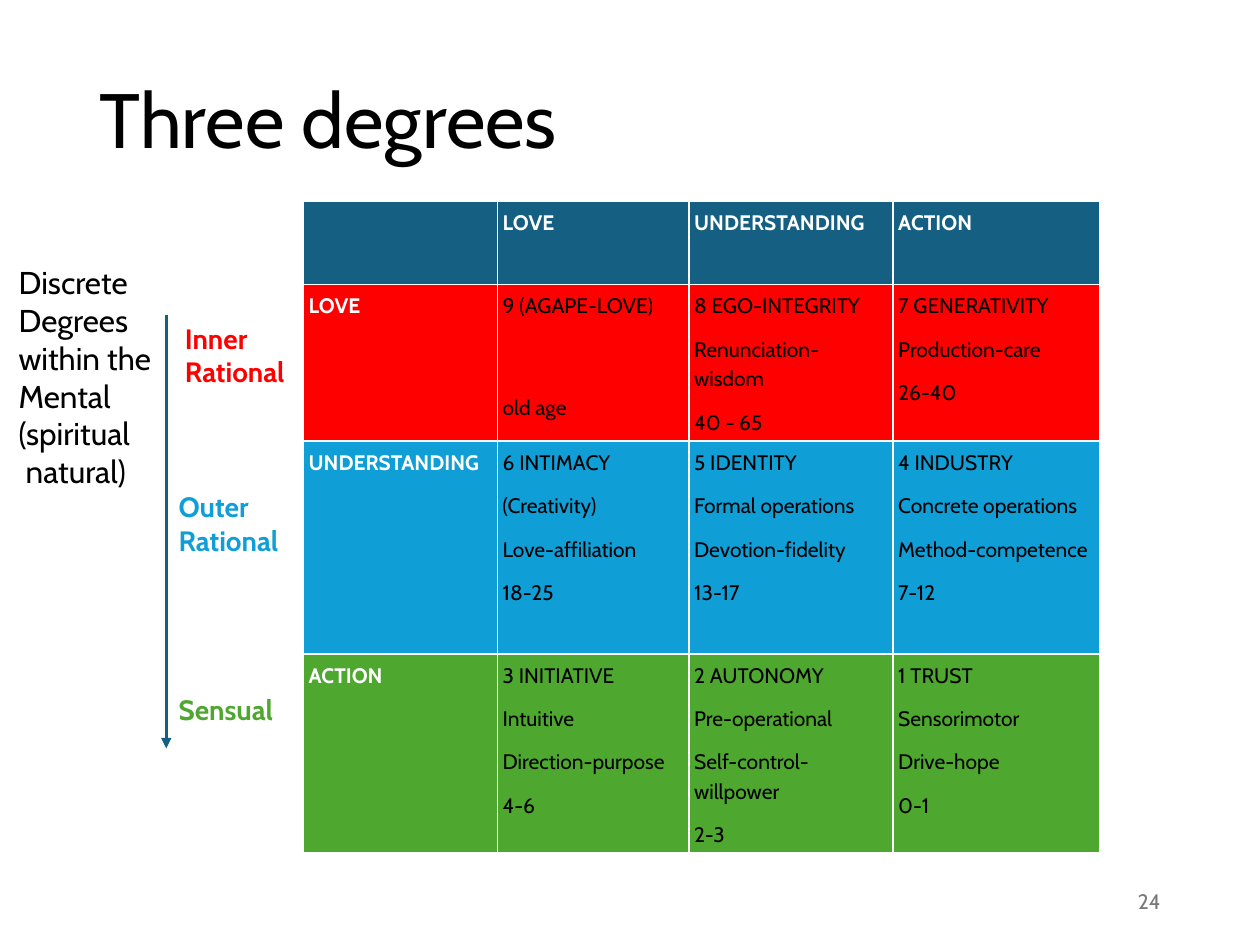
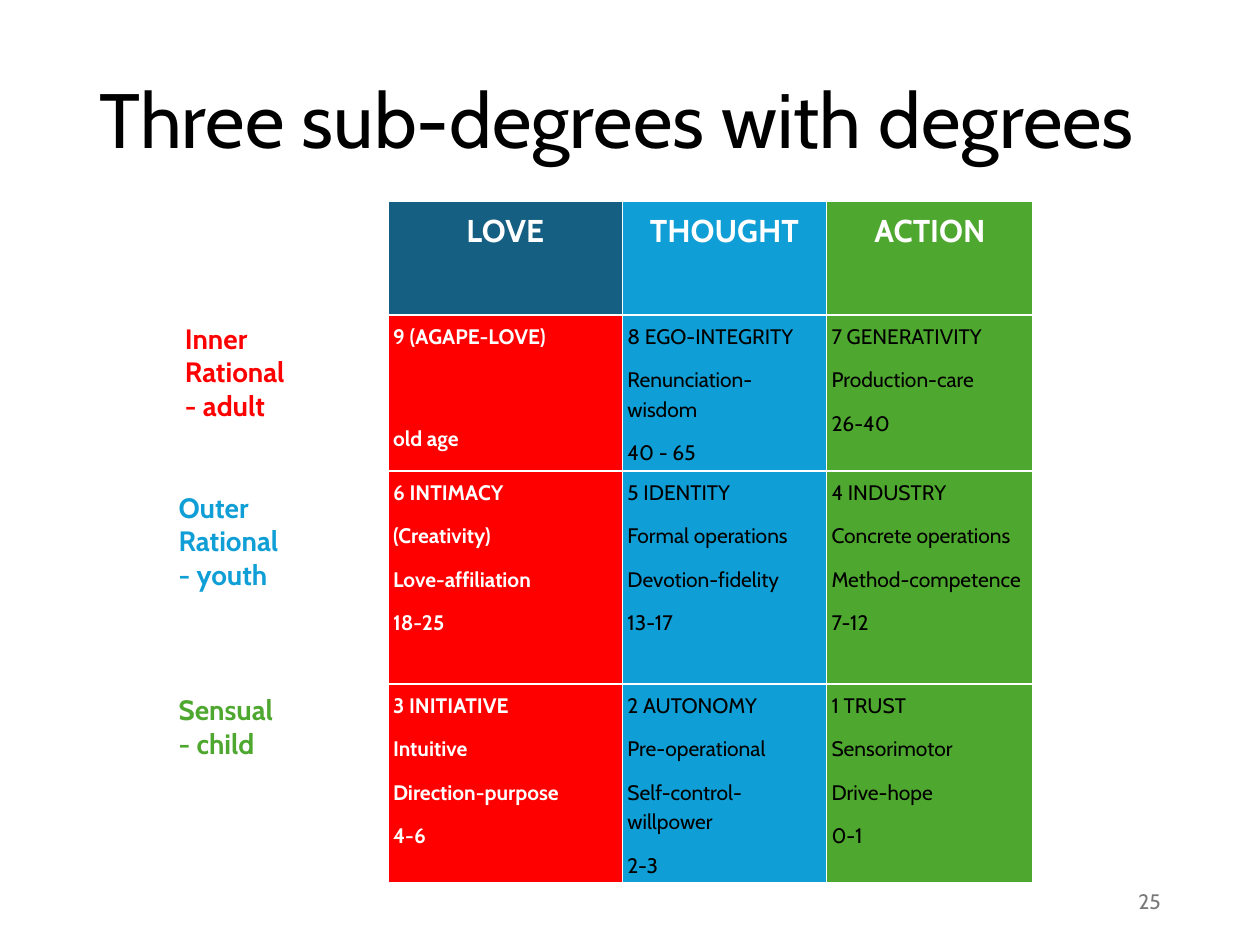
"""Builds two slides that lay out nine stages of life in grids of degrees."""
import pptx
import pptx.util
import pptx.dml.color
import pptx.enum.text
import pptx.enum.shapes
import lxml.etree

Inches = pptx.util.Inches
Pt = pptx.util.Pt
RGBColor = pptx.dml.color.RGBColor
Align = pptx.enum.text.PP_ALIGN
Anchor = pptx.enum.text.MSO_ANCHOR
Fit = pptx.enum.text.MSO_AUTO_SIZE

FONT = "Cabin"
BLACK = RGBColor(0x00, 0x00, 0x00)
WHITE = RGBColor(0xFF, 0xFF, 0xFF)
GREY = RGBColor(0x79, 0x79, 0x79)
NAVY = RGBColor(0x15, 0x60, 0x82)
RED = RGBColor(0xFF, 0x00, 0x00)
BLUE = RGBColor(0x0F, 0x9E, 0xD5)
GREEN = RGBColor(0x4E, 0xA7, 0x2E)
HUES = [RED, BLUE, GREEN]

STAGES = [
    [["9 (AGAPE-LOVE)", "old age"],
     ["8 EGO-INTEGRITY", "Renunciation-wisdom", "40 - 65"],
     ["7 GENERATIVITY", "Production-care", "26-40"]],
    [["6 INTIMACY", "(Creativity)", "Love-affiliation", "18-25"],
     ["5 IDENTITY", "Formal operations", "Devotion-fidelity", "13-17"],
     ["4 INDUSTRY", "Concrete operations", "Method-competence", "7-12"]],
    [["3 INITIATIVE", "Intuitive", "Direction-purpose", "4-6"],
     ["2 AUTONOMY", "Pre-operational", "Self-control-willpower", "2-3"],
     ["1 TRUST", "Sensorimotor", "Drive-hope", "0-1"]],
]
LEVELS = ["LOVE", "UNDERSTANDING", "ACTION"]
DEGREES = [["Inner", "Rational"], ["Outer", "Rational"], ["Sensual"]]
AGES = ["- adult", "- youth", "- child"]
SCOPE = ["Discrete\vDegrees", "within the", "Mental", "(spiritual\v natural)"]

GRID_TOP = 1.6
ROW_HIGH = [1.24, 1.69, 1.58]
LABEL_AT = [(1.37, 2.5, 1.06), (1.32, 3.84, 1.06), (1.32, 5.45, 1.03)]
LABEL_LINE = 0.27
LABEL_PAD = 0.1


def write(frame, lines, size, color, bold=False, align=Align.LEFT):
    """Fill a text frame with evenly styled paragraphs."""
    for i, line in enumerate(lines):
        para = frame.add_paragraph() if i else frame.paragraphs[0]
        para.text = line
        para.alignment = align
        para.font.name = FONT
        para.font.size = Pt(size)
        para.font.bold = bold
        para.font.color.rgb = color


def add_text(slide, box, lines, size, color, bold=False):
    """Add an unwrapped text box that fits its lines."""
    frame = slide.shapes.add_textbox(*map(Inches, box)).text_frame
    frame.word_wrap = False
    frame.auto_size = Fit.SHAPE_TO_FIT_TEXT
    write(frame, lines, size, color, bold)


def add_page(deck, title, number):
    """Add a slide with its title and page number."""
    slide = deck.slides.add_slide(deck.slide_layouts[5])
    head = slide.shapes.title
    head.left, head.top = Inches(0.69), Inches(0.4)
    head.width, head.height = Inches(8.62), Inches(1.16)
    frame = head.text_frame
    frame.auto_size = Fit.NONE
    frame.vertical_anchor = Anchor.MIDDLE
    write(frame, [title], 44, BLACK)
    frame.paragraphs[0].line_spacing = 0.9
    foot = slide.shapes.add_textbox(
        Inches(7.06), Inches(6.95), Inches(2.25), Inches(0.4)).text_frame
    foot.word_wrap = True
    foot.vertical_anchor = Anchor.MIDDLE
    write(foot, [str(number)], 12, GREY, align=Align.RIGHT)
    return slide


def add_grid(slide, left, widths, top_high, cells, hue, top_size, top_align):
    """Add a table whose first row and first column are white and bold."""
    highs = [top_high] + ROW_HIGH
    grid = slide.shapes.add_table(
        len(highs), len(widths), Inches(left), Inches(GRID_TOP),
        Inches(sum(widths)), Inches(sum(highs))).table
    grid.horz_banding = False
    for col, width in zip(grid.columns, widths):
        col.width = Inches(width)
    for row, high in zip(grid.rows, highs):
        row.height = Inches(high)
    for r, row in enumerate(cells):
        for c, lines in enumerate(row):
            cell = grid.cell(r, c)
            cell.fill.solid()
            cell.fill.fore_color.rgb = hue(r, c)
            cell.margin_left = cell.margin_right = Inches(0.04)
            cell.margin_top = cell.margin_bottom = Inches(0.04)
            lead = r == 0 or c == 0
            write(cell.text_frame, lines, 12 if r else top_size,
                  WHITE if lead else BLACK, lead,
                  Align.LEFT if r else top_align)
            for para in cell.text_frame.paragraphs:
                para.line_spacing = 1.15
                para.space_after = Pt(8)
                if para.text == "old age":
                    para.space_before = Pt(33.4)


def add_labels(slide, labels):
    """Name the degree beside each row of the grid."""
    for (left, top, width), lines, color in zip(LABEL_AT, labels, HUES):
        high = LABEL_PAD + LABEL_LINE * len(lines)
        add_text(slide, (left, top, width, high), lines, 16, color, True)


def add_arrow(slide, x, top, end):
    """Draw a downward arrow."""
    line = slide.shapes.add_connector(
        pptx.enum.shapes.MSO_CONNECTOR.STRAIGHT,
        Inches(x), Inches(top), Inches(x), Inches(end))
    line.line.color.rgb = NAVY
    line.line.width = Pt(1.5)
    name = pptx.oxml.ns.qn
    tip = lxml.etree.SubElement(line.line._get_or_add_ln(), name("a:tailEnd"))
    tip.set("type", "triangle")
    lxml.etree.SubElement(line._element.spPr, name("a:effectLst"))


def main():
    """Build and save both slides."""
    deck = pptx.Presentation()
    deck.slide_width, deck.slide_height = Inches(10), Inches(7.5)

    slide = add_page(deck, "Three degrees", 24)
    cells = [[[]] + [[name] for name in LEVELS]]
    cells += [[[name]] + row for name, row in zip(LEVELS, STAGES)]
    add_grid(slide, 2.41, [1.54, 1.52, 1.62, 1.64], 0.66, cells,
             lambda r, c: HUES[r - 1] if r else NAVY, 12, Align.LEFT)
    add_text(slide, (0.05, 2.04, 1.27, 1.92), SCOPE, 18, BLACK)
    add_arrow(slide, 1.32, 2.5, 5.94)
    add_labels(slide, DEGREES)

    slide = add_page(deck, "Three sub-degrees with degrees", 25)
    cells = [[["LOVE"], ["THOUGHT"], ["ACTION"]]] + STAGES
    add_grid(slide, 3.08, [1.86, 1.62, 1.64], 0.9, cells,
             lambda r, c: HUES[c] if r or c else NAVY, 18, Align.CENTER)
    add_labels(slide, [lines + [age] for lines, age in zip(DEGREES, AGES)])

    deck.save("out.pptx")


if __name__ == "__main__":
    main()
